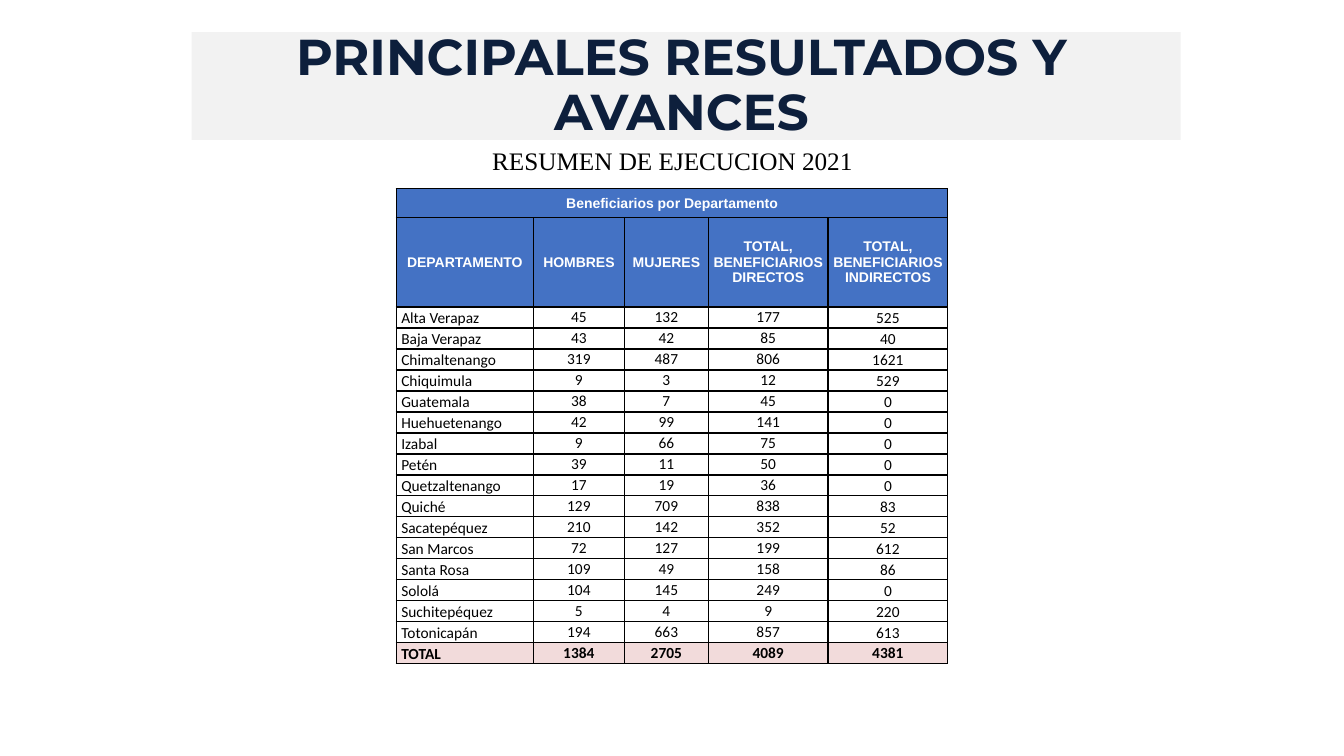
from dataclasses import dataclass
from typing import NamedTuple

from lxml.etree import SubElement
from pptx import Presentation
from pptx.dml.color import RGBColor
from pptx.enum.shapes import MSO_SHAPE
from pptx.enum.text import MSO_ANCHOR, PP_ALIGN
from pptx.oxml.ns import qn
from pptx.util import Pt


class TextStyle(NamedTuple):
    font: str
    size: float
    color: str
    bold: bool = False


@dataclass(frozen=True)
class Theme:
    band: str = "F2F2F2"
    header_fill: str = "4472C4"
    body_fill: str = "FFFFFF"
    total_fill: str = "F2DBDB"
    border: str = "000000"
    border_width: float = 1
    title: TextStyle = TextStyle("Montserrat", 36, "0D1F3C", True)
    subtitle: TextStyle = TextStyle("Times New Roman", 18, "000000")
    header: TextStyle = TextStyle("Arial", 10, "FFFFFF", True)
    body: TextStyle = TextStyle("Calibri", 11, "000000")
    total: TextStyle = TextStyle("Calibri", 11, "000000", True)


class Box(NamedTuple):
    left: float
    top: float
    width: float
    height: float

    def emu(self) -> list:
        return [Pt(v) for v in self]


class Department(NamedTuple):
    name: str
    men: int
    women: int
    indirect: int

    def cells(self) -> list:
        return [self.name, self.men, self.women, self.men + self.women, self.indirect]


THEME = Theme()
TITLE_BAND = Box(136.8, 23, 706.6, 77)
TITLE_BOX = Box(136.8, 28.8, 699.8, 66.2)
SUBTITLE_BOX = Box(340.6, 100.1, 279.4, 28.8)
TABLE_BOX = Box(283, 134.8, 394, 339.5)
COLUMN_WIDTHS = [98, 65, 60, 85.5, 85.5]
TITLE_ROW, HEADER_ROW, BODY_ROW = 20.8, 63.7, 15

HEADERS = ["DEPARTAMENTO", "HOMBRES", "MUJERES",
           "TOTAL, BENEFICIARIOS DIRECTOS", "TOTAL, BENEFICIARIOS INDIRECTOS"]
DEPARTMENTS = [
    Department("Alta Verapaz", 45, 132, 525),
    Department("Baja Verapaz", 43, 42, 40),
    Department("Chimaltenango", 319, 487, 1621),
    Department("Chiquimula", 9, 3, 529),
    Department("Guatemala", 38, 7, 0),
    Department("Huehuetenango", 42, 99, 0),
    Department("Izabal", 9, 66, 0),
    Department("Petén", 39, 11, 0),
    Department("Quetzaltenango", 17, 19, 0),
    Department("Quiché", 129, 709, 83),
    Department("Sacatepéquez", 210, 142, 52),
    Department("San Marcos", 72, 127, 612),
    Department("Santa Rosa", 109, 49, 86),
    Department("Sololá", 104, 145, 0),
    Department("Suchitepéquez", 5, 4, 220),
    Department("Totonicapán", 194, 663, 613),
]
TOTAL = Department("TOTAL", sum(d.men for d in DEPARTMENTS),
                   sum(d.women for d in DEPARTMENTS),
                   sum(d.indirect for d in DEPARTMENTS))


def write(tf, text: str, style: TextStyle, align=PP_ALIGN.CENTER):
    p = tf.paragraphs[0]
    p.alignment = align
    r = p.add_run()
    r.text = text
    r.font.name = style.font
    r.font.size = Pt(style.size)
    r.font.bold = style.bold
    r.font.color.rgb = RGBColor.from_string(style.color)
    return p


def add_text(slide, box: Box, text: str, style: TextStyle, wrap: bool, anchor):
    tf = slide.shapes.add_textbox(*box.emu()).text_frame
    tf.word_wrap = wrap
    tf.vertical_anchor = anchor
    return write(tf, text, style)


def set_borders(cell) -> None:
    tc_pr = cell._tc.get_or_add_tcPr()
    for side in ("a:lnL", "a:lnR", "a:lnT", "a:lnB"):
        ln = SubElement(tc_pr, qn(side), w=str(Pt(THEME.border_width)))
        fill = SubElement(ln, qn("a:solidFill"))
        SubElement(fill, qn("a:srgbClr"), val=THEME.border)


def format_cell(cell, fill: str) -> None:
    set_borders(cell)  # borders precede the fill in the cell properties
    cell.fill.solid()
    cell.fill.fore_color.rgb = RGBColor.from_string(fill)
    cell.margin_left = cell.margin_right = Pt(3.6)
    cell.margin_top = cell.margin_bottom = Pt(0)
    cell.vertical_anchor = MSO_ANCHOR.MIDDLE


def fill_row(table, row: int, values: list, style: TextStyle, fill: str,
             bottom: tuple = ()) -> None:
    for col, value in enumerate(values):
        cell = table.cell(row, col)
        format_cell(cell, fill)
        if col in bottom:
            cell.vertical_anchor = MSO_ANCHOR.BOTTOM
        is_name = col == 0 and bottom
        write(cell.text_frame, str(value), style,
              PP_ALIGN.LEFT if is_name else PP_ALIGN.CENTER)


def add_beneficiaries(slide) -> None:
    heights = [TITLE_ROW, HEADER_ROW] + [BODY_ROW] * (len(DEPARTMENTS) + 1)
    table = slide.shapes.add_table(len(heights), len(HEADERS), *TABLE_BOX.emu()).table
    for column, width in zip(table.columns, COLUMN_WIDTHS):
        column.width = Pt(width)
    for row, height in zip(table.rows, heights):
        row.height = Pt(height)

    # Heading rows
    for col in range(len(HEADERS)):
        format_cell(table.cell(0, col), THEME.header_fill)
    heading = table.cell(0, 0)
    heading.merge(table.cell(0, len(HEADERS) - 1))
    write(heading.text_frame, "Beneficiarios por Departamento", THEME.header)
    fill_row(table, 1, HEADERS, THEME.header, THEME.header_fill)

    # Departments and total
    for row, department in enumerate(DEPARTMENTS, start=2):
        fill_row(table, row, department.cells(), THEME.body, THEME.body_fill, (0, 4))
    fill_row(table, len(heights) - 1, TOTAL.cells(), THEME.total, THEME.total_fill, (0,))


def main() -> None:
    prs = Presentation()
    prs.slide_width, prs.slide_height = Pt(960), Pt(540)
    s = prs.slides.add_slide(prs.slide_layouts[6])

    # Title on its grey band
    sp = s.shapes.add_shape(MSO_SHAPE.RECTANGLE, *TITLE_BAND.emu())
    sp.shadow.inherit = False
    sp.fill.solid()
    sp.fill.fore_color.rgb = RGBColor.from_string(THEME.band)
    sp.line.fill.background()
    p = add_text(s, TITLE_BOX, "PRINCIPALES RESULTADOS Y AVANCES", THEME.title,
                 True, MSO_ANCHOR.MIDDLE)
    p.line_spacing = 0.9

    # Table and its caption
    add_beneficiaries(s)
    add_text(s, SUBTITLE_BOX, "RESUMEN DE EJECUCION 2021", THEME.subtitle,
             False, MSO_ANCHOR.TOP)

    prs.save("out.pptx")


if __name__ == "__main__":
    main()
